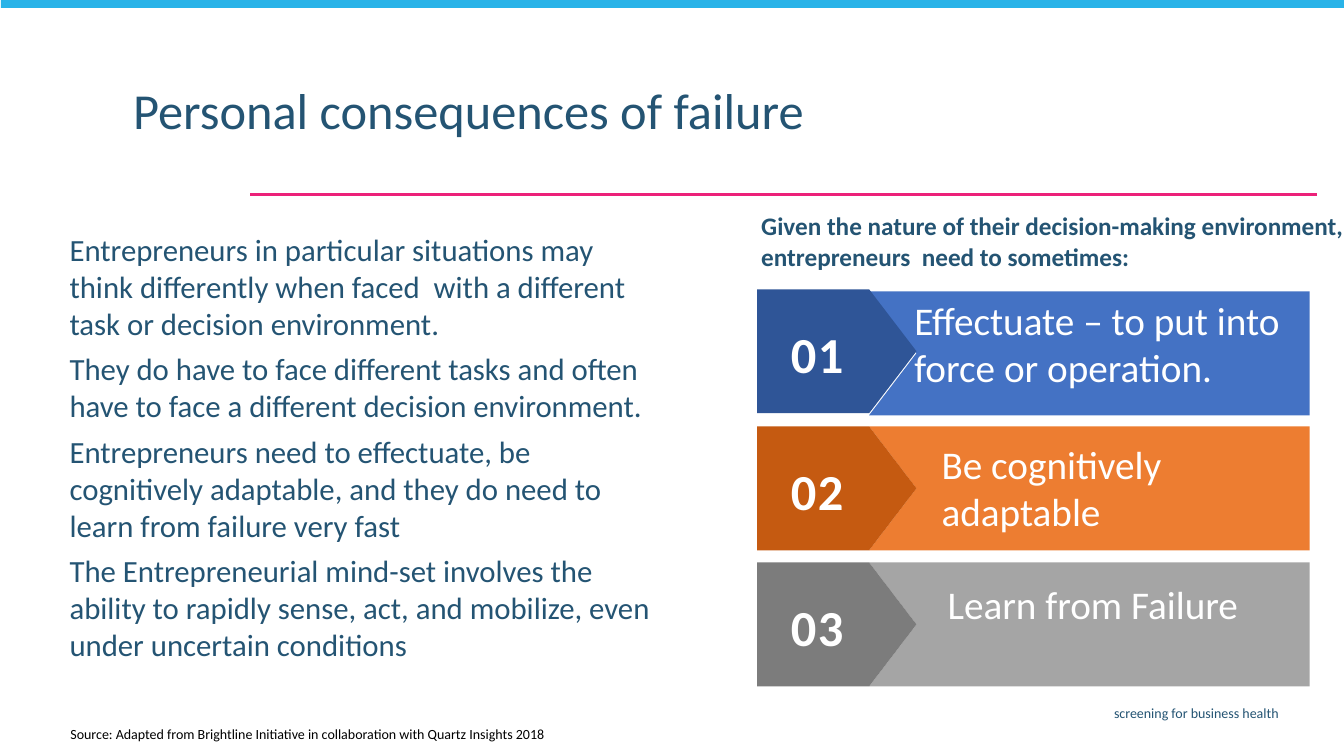
"""Build the slide on the personal consequences of failure."""
import pptx
import pptx.dml.color
import pptx.enum.shapes
import pptx.enum.text
import pptx.oxml.ns
import pptx.util
from lxml import etree

Inches = pptx.util.Inches
Pt = pptx.util.Pt
ALIGN = pptx.enum.text.PP_ALIGN
ANCHOR = pptx.enum.text.MSO_ANCHOR

FONT = "Calibri"
NAVY, WHITE, BLACK = "245473", "FFFFFF", "000000"
SKY, PINK = "29B3E8", "EC2179"

TITLE = "Personal consequences of failure"
STATEMENTS = [
    "Entrepreneurs in particular situations may think differently when faced\u00a0 with a different task or decision environment.",
    "They do have to face different tasks and often have to face a different decision environment.",
    "Entrepreneurs need to effectuate, be cognitively adaptable, and they do need to learn from failure very fast",
    "The Entrepreneurial mind-set involves the ability to rapidly sense, act, and mobilize, even under uncertain conditions",
]
HEADING = "Given the nature of their decision-making environment, \ventrepreneurs\u00a0 need to sometimes:"
SOURCE = "Source: Adapted from Brightline Initiative in collaboration with Quartz Insights 2018"
TAGLINE = "screening for business health"

STEPS = [
    dict(number="01", text="Effectuate – to put into force or operation.", panel="4472C4", tab="2F5597",
         panel_top=2.89, tab_top=2.87, text_at=(8.97, 2.89, 3.92, 1.04), spacing=None),
    dict(number="02", text="Be cognitively adaptable", panel="ED7D31", tab="C55A11",
         panel_top=4.23, tab_top=4.23, text_at=(9.24, 4.32, 3.38, 1.04), spacing=None),
    dict(number="03", text="Learn from Failure", panel="A5A5A5", tab="7C7C7C",
         panel_top=5.58, tab_top=5.58, text_at=(9.3, 5.94, 3.38, 0.38), spacing=Pt(16.6)),
]
TAB_LEFT, NOTCH, TIP, PANEL_RIGHT = 7.51, 8.62, 9.09, 12.99
STEP_HEIGHT = 1.23


def color(value):
    return pptx.dml.color.RGBColor.from_string(value)


def paint(shape, fill):
    shape.shadow.inherit = False
    shape.fill.solid()
    shape.fill.fore_color.rgb = color(fill)
    shape.line.fill.background()


def write(box, lines, size, ink, bold=False, align=ALIGN.LEFT, anchor=ANCHOR.TOP,
          insets=(0.1, 0.05), wrap=True, gap=0, spacing=None, tracking=None):
    frame = box.text_frame
    frame.word_wrap = wrap
    frame.vertical_anchor = anchor
    frame.margin_left = frame.margin_right = Inches(insets[0])
    frame.margin_top = frame.margin_bottom = Inches(insets[1])
    for index, line in enumerate(lines):
        para = frame.add_paragraph() if index else frame.paragraphs[0]
        para.text = line
        para.alignment = align
        para.space_before = Pt(gap if index else 0)
        if spacing:
            para.line_spacing = spacing
        for span in para.runs:
            span.font.name = FONT
            span.font.size = Pt(size)
            span.font.bold = bold
            span.font.color.rgb = color(ink)
            if tracking:
                span._r.get_or_add_rPr().set("spc", str(tracking))


def add_text(page, at, lines, size, ink, **options):
    box = page.shapes.add_textbox(*map(Inches, at))
    write(box, lines, size, ink, **options)


def add_outline(page, points, fill):
    corners = [(Inches(x), Inches(y)) for x, y in points]
    builder = page.shapes.build_freeform(*corners[0])
    builder.add_line_segments(corners[1:], close=True)
    paint(builder.convert_to_shape(), fill)


def add_step(page, step):
    top, bottom = step["panel_top"], step["panel_top"] + STEP_HEIGHT
    add_outline(page, [(NOTCH, top), (TIP, (top + bottom) / 2), (NOTCH, bottom),
                       (PANEL_RIGHT, bottom), (PANEL_RIGHT, top)], step["panel"])
    top, bottom = step["tab_top"], step["tab_top"] + STEP_HEIGHT
    add_outline(page, [(NOTCH, bottom), (TAB_LEFT, bottom), (TAB_LEFT, top),
                       (NOTCH, top), (TIP, (top + bottom) / 2)], step["tab"])
    add_text(page, (7.84, top + 0.33, 0.53, 0.61), [step["number"]], 36, WHITE, bold=True,
             align=ALIGN.CENTER, anchor=ANCHOR.MIDDLE, insets=(0, 0), wrap=False, tracking=110)
    add_text(page, step["text_at"], [step["text"]], 28, WHITE, spacing=step["spacing"])


def add_frame(page):
    rule = page.shapes.add_connector(pptx.enum.shapes.MSO_CONNECTOR.STRAIGHT,
                                     Inches(13.06), Inches(1.93), Inches(2.48), Inches(1.93))
    rule.line.color.rgb = color(PINK)
    rule.line.width = Pt(1.5)
    etree.SubElement(rule._element.spPr, pptx.oxml.ns.qn("a:effectLst"))
    band = page.shapes.add_shape(pptx.enum.shapes.MSO_SHAPE.RECTANGLE,
                                 Inches(0.01), Inches(-0.02), Inches(13.34), Inches(0.1))
    paint(band, SKY)
    add_text(page, (3.65, 6.94, 9.13, 0.29), [TAGLINE], 10, NAVY, align=ALIGN.RIGHT)


def main():
    deck = pptx.Presentation()
    deck.slide_width, deck.slide_height = Inches(13.33), Inches(7.5)
    page = deck.slides.add_slide(deck.slide_layouts[5])
    add_frame(page)

    title = page.shapes.title
    title.left, title.top, title.width, title.height = map(Inches, (1.22, 0.8, 9.68, 0.76))
    write(title, [TITLE], 36, NAVY, spacing=0.9)

    add_text(page, (0.6, 2.25, 6, 4.42), STATEMENTS, 22, NAVY, insets=(0.09, 0.04), gap=6)
    add_text(page, (0.6, 7.14, 6.06, 0.27), [SOURCE], 10, BLACK, anchor=ANCHOR.BOTTOM)
    add_text(page, (7.51, 2.07, 9.01, 0.64), [HEADING], 18, NAVY, bold=True, insets=(0.04, 0.02))
    for step in STEPS:
        add_step(page, step)
    deck.save("out.pptx")


if __name__ == "__main__":
    main()
